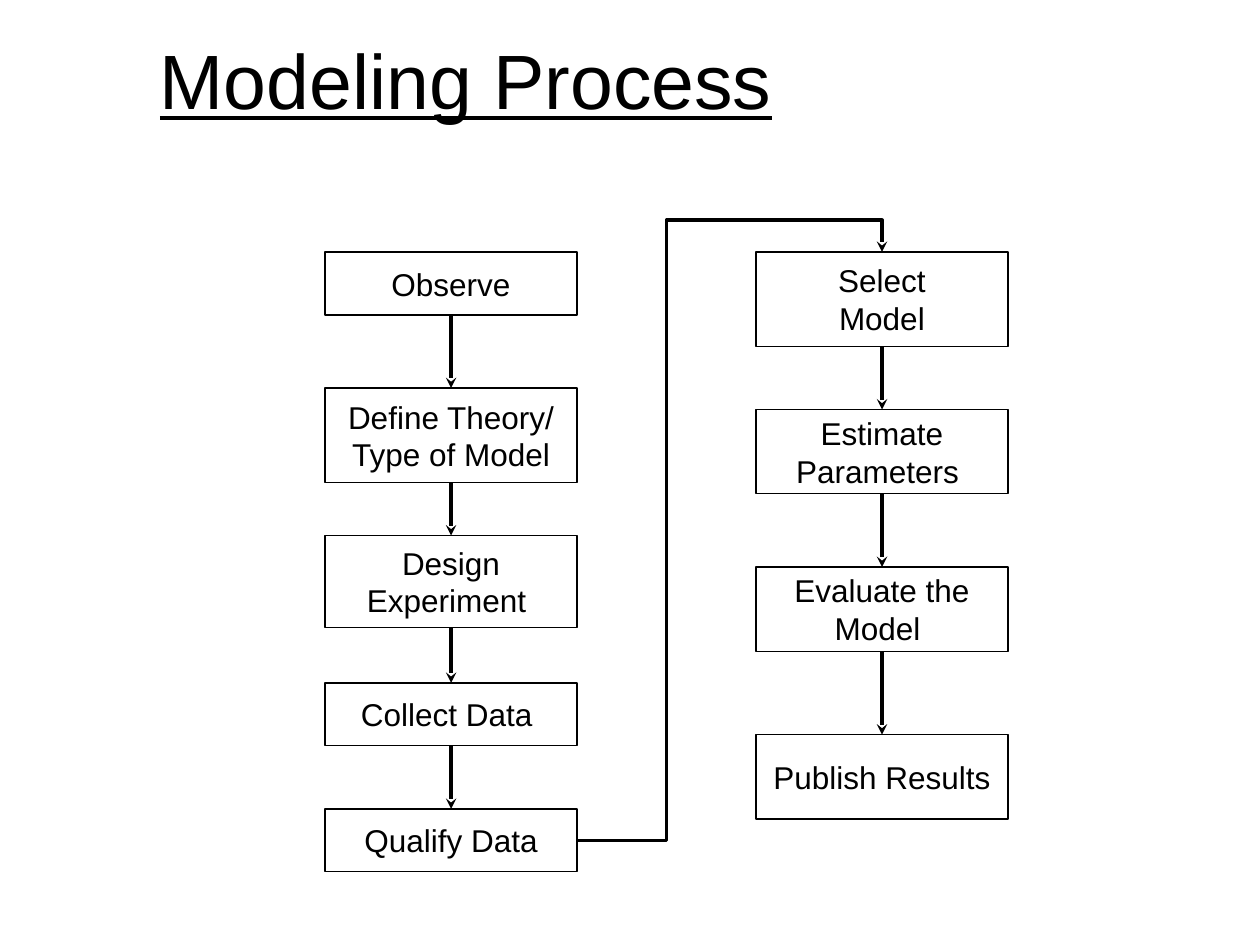
"""Build the Modeling Process flowchart slide."""
from itertools import pairwise

from lxml.etree import SubElement
from pptx import Presentation
from pptx.dml.color import RGBColor
from pptx.enum.shapes import MSO_CONNECTOR as Link, MSO_SHAPE as Shape
from pptx.enum.text import MSO_ANCHOR as Anchor, PP_ALIGN as Align
from pptx.oxml.ns import qn
from pptx.util import Inches, Pt

BLACK = RGBColor(0, 0, 0)
FONT = "Arial"
TITLE = "Modeling Process"
BOX_WIDTH = 2
TOP, RIGHT, BOTTOM = 0, 3, 2
COLUMNS = [
    (2.58, [
        (2, 0.5, ["Observe"]),
        (3.08, 0.75, ["Define Theory/", "Type of Model"]),
        (4.25, 0.73, ["Design", "Experiment "]),
        (5.42, 0.5, ["Collect Data "]),
        (6.42, 0.5, ["Qualify Data"]),
    ]),
    (6, [
        (2, 0.75, ["Select", "Model"]),
        (3.25, 0.67, ["Estimate", "Parameters "]),
        (4.5, 0.67, ["Evaluate the Model "]),
        (5.83, 0.67, ["Publish Results"]),
    ]),
]
BENDS = {"adj1": 29300, "adj2": 105400}


def write(shape, lines, size, align, underline=None):
    frame = shape.text_frame
    frame.word_wrap = True
    frame.vertical_anchor = Anchor.MIDDLE
    for index, line in enumerate(lines):
        para = frame.add_paragraph() if index else frame.paragraphs[0]
        para.alignment = align
        span = para.add_run()
        span.text = line
        span.font.name = FONT
        span.font.size = Pt(size)
        span.font.color.rgb = BLACK
        span.font.underline = underline


def add_step(page, left, top, height, lines):
    box = page.shapes.add_shape(Shape.RECTANGLE, Inches(left), Inches(top),
                                Inches(BOX_WIDTH), Inches(height))
    box.shadow.inherit = False
    box.fill.background()
    box.line.color.rgb = BLACK
    box.line.width = Pt(0.75)
    write(box, lines, 18, Align.CENTER)
    return box


def add_arrow(page, kind, start, start_side, end):
    arrow = page.shapes.add_connector(kind, 0, 0, 0, 0)
    arrow.begin_connect(start, start_side)
    arrow.end_connect(end, TOP)
    arrow.line.color.rgb = BLACK
    arrow.line.width = Pt(2)
    SubElement(arrow.line._get_or_add_ln(), qn("a:tailEnd"), type="stealth")
    properties = arrow._element.spPr
    SubElement(properties, qn("a:effectLst"))
    return properties


def main():
    deck = Presentation()
    deck.slide_width, deck.slide_height = Inches(10), Inches(7.5)
    page = deck.slides.add_slide(deck.slide_layouts[6])
    title = page.shapes.add_textbox(Inches(1.17), 0, Inches(8.67), Inches(1.25))
    write(title, [TITLE], 44, Align.LEFT, underline=True)

    chains = [[add_step(page, left, *step) for step in steps] for left, steps in COLUMNS]
    for chain in chains:
        for upper, lower in pairwise(chain):
            add_arrow(page, Link.STRAIGHT, upper, BOTTOM, lower)

    first, second = chains
    properties = add_arrow(page, Link.ELBOW, first[-1], RIGHT, second[0])
    geometry = properties.find(qn("a:prstGeom"))
    geometry.set("prst", "bentConnector4")
    guides = geometry.find(qn("a:avLst"))
    for name, value in BENDS.items():
        SubElement(guides, qn("a:gd"), name=name, fmla=f"val {value}")
    deck.save("out.pptx")


if __name__ == "__main__":
    main()
